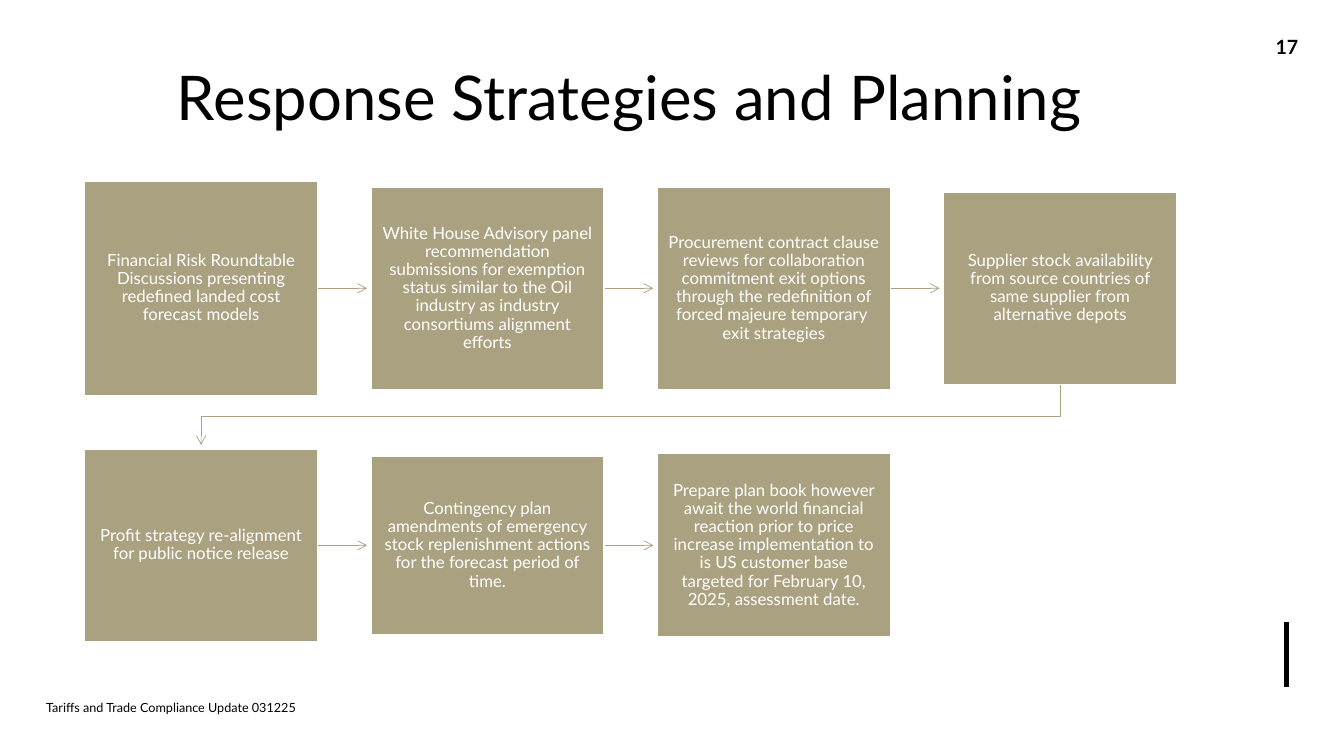
from dataclasses import dataclass

from lxml.etree import SubElement
from pptx import Presentation
from pptx.dml.color import RGBColor
from pptx.enum.shapes import MSO_CONNECTOR as Link, MSO_SHAPE as Kind
from pptx.enum.text import MSO_ANCHOR as Anchor, PP_ALIGN as Align
from pptx.oxml.ns import qn
from pptx.shapes.connector import Connector
from pptx.slide import Slide
from pptx.text.text import TextFrame
from pptx.util import Inches, Pt

BLACK = RGBColor(0x00, 0x00, 0x00)
WHITE = RGBColor(0xFF, 0xFF, 0xFF)
SAND = RGBColor(0xAA, 0xA1, 0x80)
FONT = "Lato"
LEFT, PITCH, WIDTH = 0.84, 2.84, 2.31
ROWS = (2.86, 5.41)
GAP = 0.04


@dataclass(frozen=True)
class Label:
    text: str
    left: float
    top: float
    width: float
    height: float
    size: float
    align: Align
    bold: bool = False


@dataclass(frozen=True)
class Step:
    row: int
    col: int
    height: float
    text: str

    @property
    def left(self) -> float:
        return LEFT + self.col * PITCH

    @property
    def mid(self) -> float:
        return self.left + WIDTH / 2

    @property
    def top(self) -> float:
        return ROWS[self.row] - self.height / 2


LABELS = (
    Label("Response Strategies and Planning", 0.83, 0.32, 10.83, 1.27, 44, Align.CENTER),
    Label("17", 12.35, 0.26, 0.83, 0.4, 14, Align.CENTER, True),
    Label("Tariffs and Trade Compliance Update 031225", 0.36, 6.82, 4.5, 0.4, 9, Align.LEFT),
)

STEPS = (
    Step(0, 0, 2.13, "Financial Risk Roundtable Discussions presenting redefined landed cost forecast models"),
    Step(0, 1, 2.01, "White House Advisory panel recommendation submissions for exemption status "
         "similar to the Oil industry as industry consortiums alignment efforts"),
    Step(0, 2, 2.01, "Procurement contract clause reviews for collaboration commitment exit options "
         "through the redefinition of forced majeure temporary  exit strategies"),
    Step(0, 3, 1.91, "Supplier stock availability from source countries of same supplier from alternative depots"),
    Step(1, 0, 1.91, "Profit strategy re-alignment for public notice release"),
    Step(1, 1, 1.77, "Contingency plan amendments of emergency stock replenishment actions "
         "for the forecast period of time."),
    Step(1, 2, 1.82, "Prepare plan book however await the world financial reaction prior to price increase "
         "implementation to is US customer base targeted for February 10, 2025, assessment date."),
)


def write(frame: TextFrame, text: str, size: float, color: RGBColor,
          align: Align, bold: bool = False) -> None:
    frame.word_wrap = True
    frame.vertical_anchor = Anchor.MIDDLE
    para = frame.paragraphs[0]
    para.text = text
    para.alignment = align
    font = para.font
    font.name, font.size, font.bold = FONT, Pt(size), bold
    font.color.rgb = color


def add_label(slide: Slide, label: Label) -> None:
    box = slide.shapes.add_textbox(Inches(label.left), Inches(label.top),
                                   Inches(label.width), Inches(label.height))
    write(box.text_frame, label.text, label.size, BLACK, label.align, label.bold)


def add_step(slide: Slide, step: Step) -> None:
    box = slide.shapes.add_shape(Kind.RECTANGLE, Inches(step.left), Inches(step.top),
                                 Inches(WIDTH), Inches(step.height))
    box.shadow.inherit = False
    box.fill.solid()
    box.fill.fore_color.rgb = SAND
    box.line.color.rgb = WHITE
    box.line.width = Pt(1)
    frame = box.text_frame
    frame.margin_left = frame.margin_right = Inches(0.11)
    frame.margin_top = frame.margin_bottom = Inches(0.12)
    write(frame, step.text, 12, WHITE, Align.CENTER)
    frame.paragraphs[0].line_spacing = 0.9


def add_line(slide: Slide, x1: float, y1: float, x2: float, y2: float,
             color: RGBColor, width: float) -> Connector:
    line = slide.shapes.add_connector(Link.STRAIGHT, Inches(x1), Inches(y1),
                                      Inches(x2), Inches(y2))
    line.line.color.rgb = color
    line.line.width = Pt(width)
    SubElement(line._element.spPr, qn("a:effectLst"))
    return line


def add_head(shape) -> None:
    SubElement(shape.line._get_or_add_ln(), qn("a:tailEnd"), type="arrow")


def add_turn(slide: Slide, start: Step, end: Step) -> None:
    low = start.top + start.height
    bend = (low + end.top) / 2
    path = slide.shapes.build_freeform(Inches(start.mid), Inches(low))
    points = ((start.mid, bend), (end.mid, bend), (end.mid, end.top - GAP))
    path.add_line_segments([(Inches(x), Inches(y)) for x, y in points], close=False)
    turn = path.convert_to_shape()
    turn.shadow.inherit = False
    turn.fill.background()
    turn.line.color.rgb = SAND
    turn.line.width = Pt(0.5)
    add_head(turn)


def join(slide: Slide, start: Step, end: Step) -> None:
    if start.row == end.row:
        y = ROWS[start.row]
        add_head(add_line(slide, start.left + WIDTH, y, end.left - GAP, y, SAND, 0.5))
    else:
        add_turn(slide, start, end)


def main() -> None:
    deck = Presentation()
    deck.slide_width, deck.slide_height = Inches(13.33), Inches(7.5)
    slide = deck.slides.add_slide(deck.slide_layouts[6])
    for label in LABELS:
        add_label(slide, label)
    add_line(slide, 12.76, 6.17, 12.76, 6.82, BLACK, 3)
    for start, end in zip(STEPS, STEPS[1:]):
        join(slide, start, end)
    for step in STEPS:
        add_step(slide, step)
    deck.save("out.pptx")


if __name__ == "__main__":
    main()
